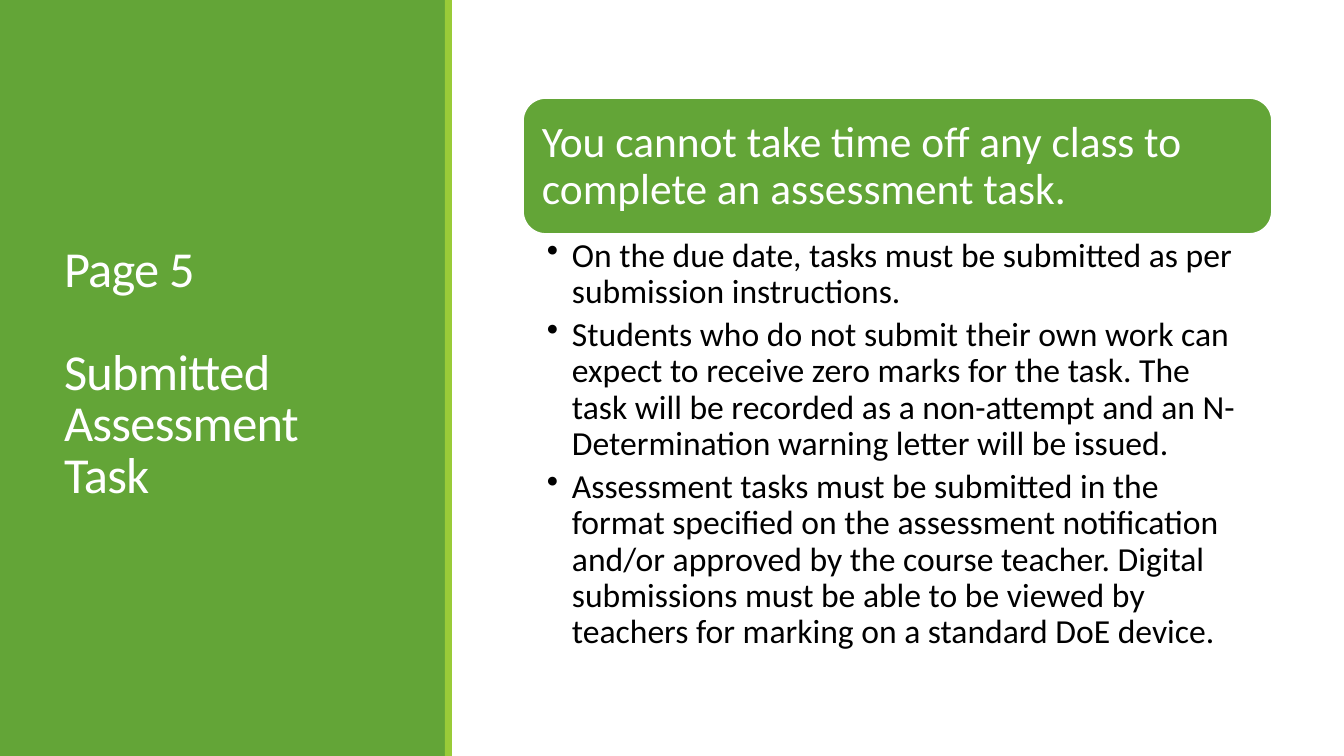
from dataclasses import dataclass

import lxml.etree
import pptx
import pptx.dml.color
import pptx.enum.shapes
import pptx.enum.text
import pptx.oxml.ns
import pptx.util

RGBColor = pptx.dml.color.RGBColor
MSO_SHAPE = pptx.enum.shapes.MSO_SHAPE
MSO_ANCHOR = pptx.enum.text.MSO_ANCHOR

GREEN = RGBColor(0x63, 0xA5, 0x37)
LIME = RGBColor(0x99, 0xCB, 0x38)
WHITE = RGBColor(0xFF, 0xFF, 0xFF)
BLACK = RGBColor(0x00, 0x00, 0x00)

EMU_PER_PX = 914400 / 100.8
FONT = "Calibri"
BULLET_INDENT = 25


@dataclass(frozen=True)
class Box:
    left: int
    top: int
    width: int
    height: int


@dataclass(frozen=True)
class Panel:
    box: Box
    fill: RGBColor
    kind: MSO_SHAPE = MSO_SHAPE.RECTANGLE
    outline: RGBColor | None = None


@dataclass(frozen=True)
class TextBlock:
    box: Box
    text: str
    size: int
    color: RGBColor
    line_spacing: float
    inset_x: int
    inset_y: int
    anchor: MSO_ANCHOR = MSO_ANCHOR.MIDDLE
    space_after: int = 0
    tracking: int = 0
    bulleted: bool = False


PANELS = [
    Panel(Box(0, 0, 446, 756), GREEN),
    Panel(Box(445, 0, 7, 756), LIME),
    Panel(Box(523, 98, 749, 136), GREEN, MSO_SHAPE.ROUNDED_RECTANGLE, WHITE),
]

RULES = [
    "On the due date, tasks must be submitted as per submission instructions.",
    "Students who do not submit their own work can expect to receive zero marks "
    "for the task. The task will be recorded as a non-attempt and an "
    "N-Determination warning letter will be issued.",
    "Assessment tasks must be submitted in the format specified on the assessment "
    "notification and/or approved by the course teacher. Digital submissions must "
    "be able to be viewed by teachers for marking on a standard DoE device.",
]

TEXT_BLOCKS = [
    TextBlock(Box(54, 57, 340, 636), "Page 5 \v\vSubmitted Assessment Task",
              36, WHITE, 0.85, 10, 5, tracking=-50),
    TextBlock(Box(529, 105, 736, 123),
              "You cannot take time off any class to complete an assessment task.",
              31, WHITE, 0.9, 13, 13),
    TextBlock(Box(523, 234, 749, 431), "\n".join(RULES), 24, BLACK, 0.9, 24, 4,
              anchor=MSO_ANCHOR.TOP, space_after=5, bulleted=True),
]


def px(n: int) -> pptx.util.Emu:
    return pptx.util.Emu(round(n * EMU_PER_PX))


def place(box: Box) -> tuple[pptx.util.Emu, ...]:
    return px(box.left), px(box.top), px(box.width), px(box.height)


def draw_panel(s: pptx.slide.Slide, panel: Panel) -> None:
    sp = s.shapes.add_shape(panel.kind, *place(panel.box))
    sp.shadow.inherit = False
    sp.fill.solid()
    sp.fill.fore_color.rgb = panel.fill
    if panel.outline is None:
        sp.line.fill.background()
    else:
        sp.line.color.rgb = panel.outline
        sp.line.width = pptx.util.Pt(1.25)


def add_bullet(p: pptx.text.text._Paragraph) -> None:
    pPr = p._p.get_or_add_pPr()
    pPr.set("marL", str(px(BULLET_INDENT)))
    pPr.set("indent", str(-px(BULLET_INDENT)))
    bullet = lxml.etree.SubElement(pPr, pptx.oxml.ns.qn("a:buChar"))
    bullet.set("char", "•")


def draw_text(s: pptx.slide.Slide, block: TextBlock) -> None:
    tf = s.shapes.add_textbox(*place(block.box)).text_frame
    tf.word_wrap = True
    tf.vertical_anchor = block.anchor
    tf.margin_left = tf.margin_right = px(block.inset_x)
    tf.margin_top = tf.margin_bottom = px(block.inset_y)
    tf.text = block.text
    for p in tf.paragraphs:
        p.line_spacing = block.line_spacing
        p.space_after = pptx.util.Pt(block.space_after)
        if block.bulleted:
            add_bullet(p)
        for r in p.runs:
            r.font.name = FONT
            r.font.size = pptx.util.Pt(block.size)
            r.font.color.rgb = block.color
            if block.tracking:
                r.font._element.set("spc", str(block.tracking))
        for br in p._p.findall(pptx.oxml.ns.qn("a:br")):
            rPr = lxml.etree.SubElement(br, pptx.oxml.ns.qn("a:rPr"))
            rPr.set("sz", str(block.size * 100))


def main() -> None:
    prs = pptx.Presentation()
    prs.slide_width, prs.slide_height = px(1344), px(756)
    s = prs.slides.add_slide(prs.slide_layouts[6])
    for panel in PANELS:
        draw_panel(s, panel)
    for block in TEXT_BLOCKS:
        draw_text(s, block)
    prs.save("out.pptx")


if __name__ == "__main__":
    main()
